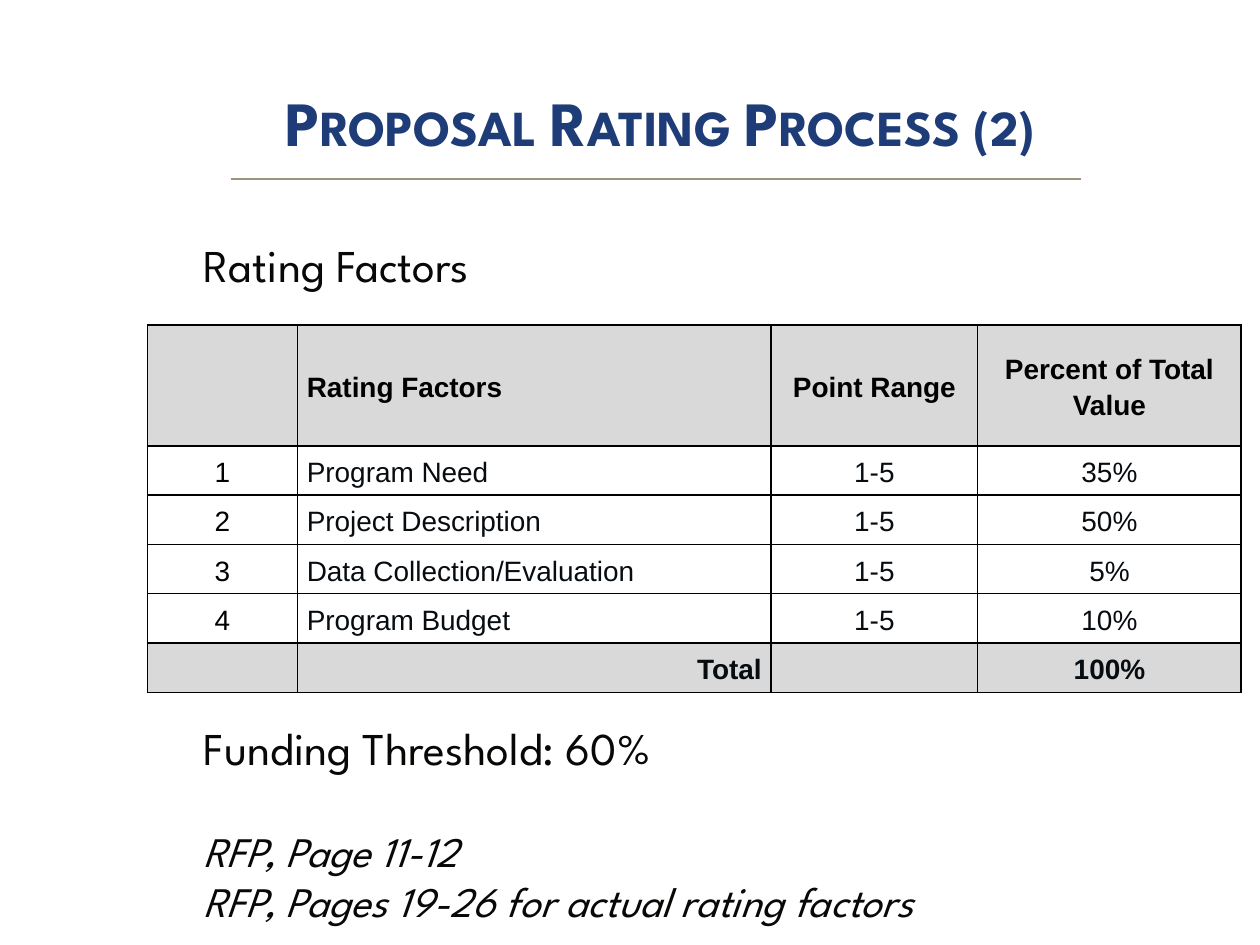
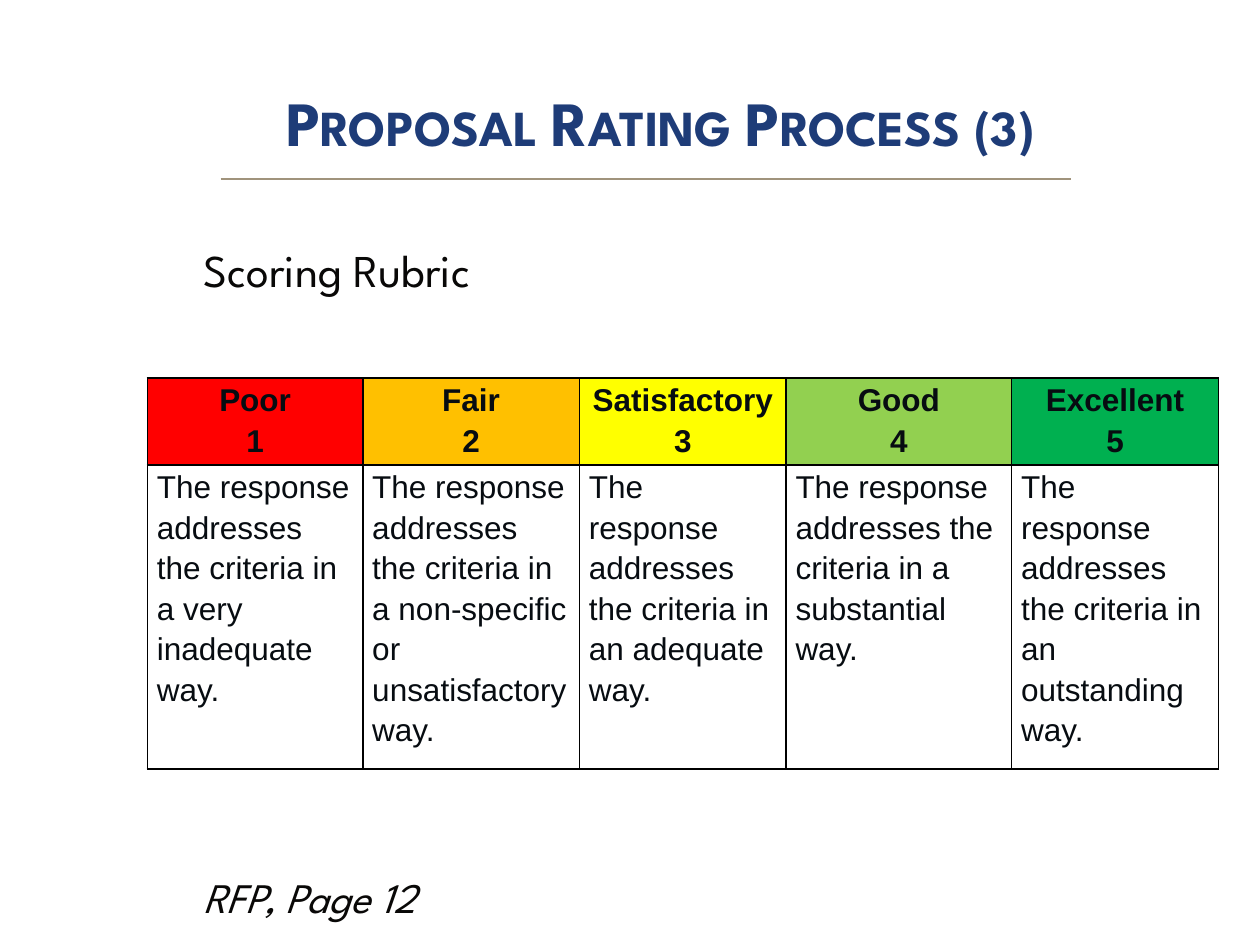
"""Build two slides on the proposal rating process: weighted factors and scoring rubric."""
import pptx
import pptx.dml.color
import pptx.enum.shapes
import pptx.enum.text
import pptx.oxml
import pptx.oxml.ns
import pptx.util

Pt = pptx.util.Pt
RGB = pptx.dml.color.RGBColor
ALIGN = pptx.enum.text.PP_ALIGN
ANCHOR = pptx.enum.text.MSO_ANCHOR

NAVY, TAUPE, BODY_INK = RGB(0x1E, 0x3C, 0x78), RGB(0xA0, 0x93, 0x7C), RGB(0x09, 0x08, 0x07)
BLACK, CELL_INK = RGB(0, 0, 0), RGB(0x07, 0x0C, 0x11)
WHITE, GRAY = RGB(255, 255, 255), RGB(0xD9, 0xD9, 0xD9)
RED, ORANGE, YELLOW = RGB(255, 0, 0), RGB(255, 0xC0, 0), RGB(255, 255, 0)
LIME, GREEN = RGB(0x92, 0xD0, 0x50), RGB(0, 0xB0, 0x50)

HEADING_FONT, TABLE_FONT = "League Spartan", "Arial"
TITLE_FORMAT = {"name": HEADING_FONT, "size": Pt(36), "bold": True}
TOPIC_FORMAT = {"name": HEADING_FONT, "size": Pt(26)}
REFERENCE_FORMAT = {"name": HEADING_FONT, "size": Pt(24), "italic": True}

TITLE = "Proposal Rating Process ({})"
RULE_TOP, RULE_WIDTH = 102.24, 486

FACTOR_NOTES = [
    ("Rating Factors", TOPIC_FORMAT, 0),
    ("Funding Threshold: 60%", TOPIC_FORMAT, 245),
    ("RFP, Page 11-12", REFERENCE_FORMAT, 29),
    ("RFP, Pages 19-26 for actual rating factors", REFERENCE_FORMAT, 0),
]
FACTOR_HEADINGS = ("", "Rating Factors", "Point Range", "Percent of Total Value")
FACTORS = [("Program Need", 35), ("Project Description", 50),
           ("Data Collection/Evaluation", 5), ("Program Budget", 10)]
POINT_RANGE = "1-5"
FACTOR_WIDTHS = (85.7, 270.7, 118.1, 150.5)
FACTOR_HEIGHTS = [69] + [28.2] * (len(FACTORS) + 1)

RUBRIC_NOTES = [
    ("Scoring Rubric", TOPIC_FORMAT, 0),
    ("RFP, Page 12", REFERENCE_FORMAT, 329),
]
RUBRIC = [("Poor", RED, "a very inadequate"),
          ("Fair", ORANGE, "a non-specific or unsatisfactory"),
          ("Satisfactory", YELLOW, "an adequate"),
          ("Good", LIME, "a substantial"),
          ("Excellent", GREEN, "an outstanding")]
RESPONSE = "The response addresses the criteria in {} way."
RUBRIC_WIDTHS = (123.1, 123.8, 118.1, 128.9, 118.1)
RUBRIC_HEIGHTS = (45.4, 152.6)


def apply(target, values):
    for name, value in values.items():
        setattr(target, name, value)


def write(paragraph, text, font_format, color):
    run = paragraph.add_run()
    run.text = text
    apply(run.font, font_format)
    run.font.color.rgb = color
    return run


def add_frame(slide, left, top, width, height, layout):
    frame = slide.shapes.add_textbox(Pt(left), Pt(top), Pt(width), Pt(height)).text_frame
    apply(frame, {"word_wrap": True, **layout})
    return frame


def add_page(deck, number, rule_left, notes, notes_top):
    slide = deck.slides.add_slide(deck.slide_layouts[6])
    heading = add_frame(slide, 37.44, 36, 648, 66.24, {
        "vertical_anchor": ANCHOR.MIDDLE, "margin_left": Pt(38.9),
        "margin_top": 0, "margin_bottom": 0}).paragraphs[0]
    heading.alignment = ALIGN.CENTER
    title_run = write(heading, TITLE.format(number), TITLE_FORMAT, NAVY)
    title_run._r.get_or_add_rPr().set("cap", "small")

    rule = slide.shapes.add_connector(
        pptx.enum.shapes.MSO_CONNECTOR.STRAIGHT, Pt(rule_left), Pt(RULE_TOP),
        Pt(rule_left + RULE_WIDTH), Pt(RULE_TOP))
    rule.line.color.rgb = TAUPE
    rule.line.width = Pt(0.75)
    rule._element.spPr.append(pptx.oxml.parse_xml(
        f"<a:effectLst {pptx.oxml.ns.nsdecls('a')}/>"))

    body = add_frame(slide, 109.44, notes_top, 576, 517 - notes_top, {})
    for index, (text, font_format, gap) in enumerate(notes):
        paragraph = body.add_paragraph() if index else body.paragraphs[0]
        paragraph.space_before = Pt(gap)
        write(paragraph, text, font_format, BODY_INK)
    return slide


def add_grid(slide, top, widths, heights):
    grid = slide.shapes.add_table(
        len(heights), len(widths), Pt(84.24), Pt(top),
        Pt(sum(widths)), Pt(sum(heights))).table
    apply(grid, {"first_row": False, "horz_banding": False})
    for column, width in zip(grid.columns, widths):
        column.width = Pt(width)
    for row, height in zip(grid.rows, heights):
        row.height = Pt(height)
    return grid


def fill_cell(cell, text, size, fill=WHITE, ink=CELL_INK, bold=False,
              align=ALIGN.LEFT, anchor=ANCHOR.MIDDLE, side=5.4):
    apply(cell, {"margin_left": Pt(side), "margin_right": Pt(side),
                 "margin_top": 0, "margin_bottom": 0, "vertical_anchor": anchor})
    borders = cell._tc.get_or_add_tcPr()
    for edge in "LRTB":
        borders.append(pptx.oxml.parse_xml(
            f'<a:ln{edge} {pptx.oxml.ns.nsdecls("a")} w="{Pt(1)}"><a:solidFill>'
            f'<a:srgbClr val="{BLACK}"/></a:solidFill></a:ln{edge}>'))
    cell.fill.solid()
    cell.fill.fore_color.rgb = fill
    for index, line in enumerate(text.split("\n")):
        paragraph = cell.text_frame.add_paragraph() if index else cell.text_frame.paragraphs[0]
        apply(paragraph, {"alignment": align, "line_spacing": 1.15})
        if line:
            write(paragraph, line, {"name": TABLE_FONT, "size": Pt(size), "bold": bold}, ink)
        else:
            paragraph.font.size = Pt(size)


def add_factors(slide):
    total = sum(percent for _, percent in FACTORS)
    rows = [FACTOR_HEADINGS]
    rows += [(str(number), factor, POINT_RANGE, f"{percent}%")
             for number, (factor, percent) in enumerate(FACTORS, 1)]
    rows.append(("", "Total", "", f"{total}%"))
    last = len(rows) - 1
    grid = add_grid(slide, 185.76, FACTOR_WIDTHS, FACTOR_HEIGHTS)
    for r, row in enumerate(rows):
        shaded = r in (0, last)
        factor_align = ALIGN.RIGHT if r == last else ALIGN.LEFT
        for c, text in enumerate(row):
            fill_cell(grid.cell(r, c), text, 16, GRAY if shaded else WHITE,
                      BLACK if r == 0 or c == 0 else CELL_INK, shaded,
                      factor_align if c == 1 else ALIGN.CENTER,
                      side=0 if c == 0 else 5.4)


def add_rubric(slide):
    grid = add_grid(slide, 216, RUBRIC_WIDTHS, RUBRIC_HEIGHTS)
    for c, (grade, color, quality) in enumerate(RUBRIC):
        fill_cell(grid.cell(0, c), f"{grade}\n{c + 1}", 18, color, bold=True,
                  align=ALIGN.CENTER, anchor=ANCHOR.TOP)
        fill_cell(grid.cell(1, c), RESPONSE.format(quality), 18, anchor=ANCHOR.TOP)


def main():
    deck = pptx.Presentation()
    apply(deck, {"slide_width": Pt(720), "slide_height": Pt(540)})
    add_factors(add_page(deck, 2, 131.76, FACTOR_NOTES, 131.76))
    add_rubric(add_page(deck, 3, 126, RUBRIC_NOTES, 134.6))
    deck.save("out.pptx")


if __name__ == "__main__":
    main()
